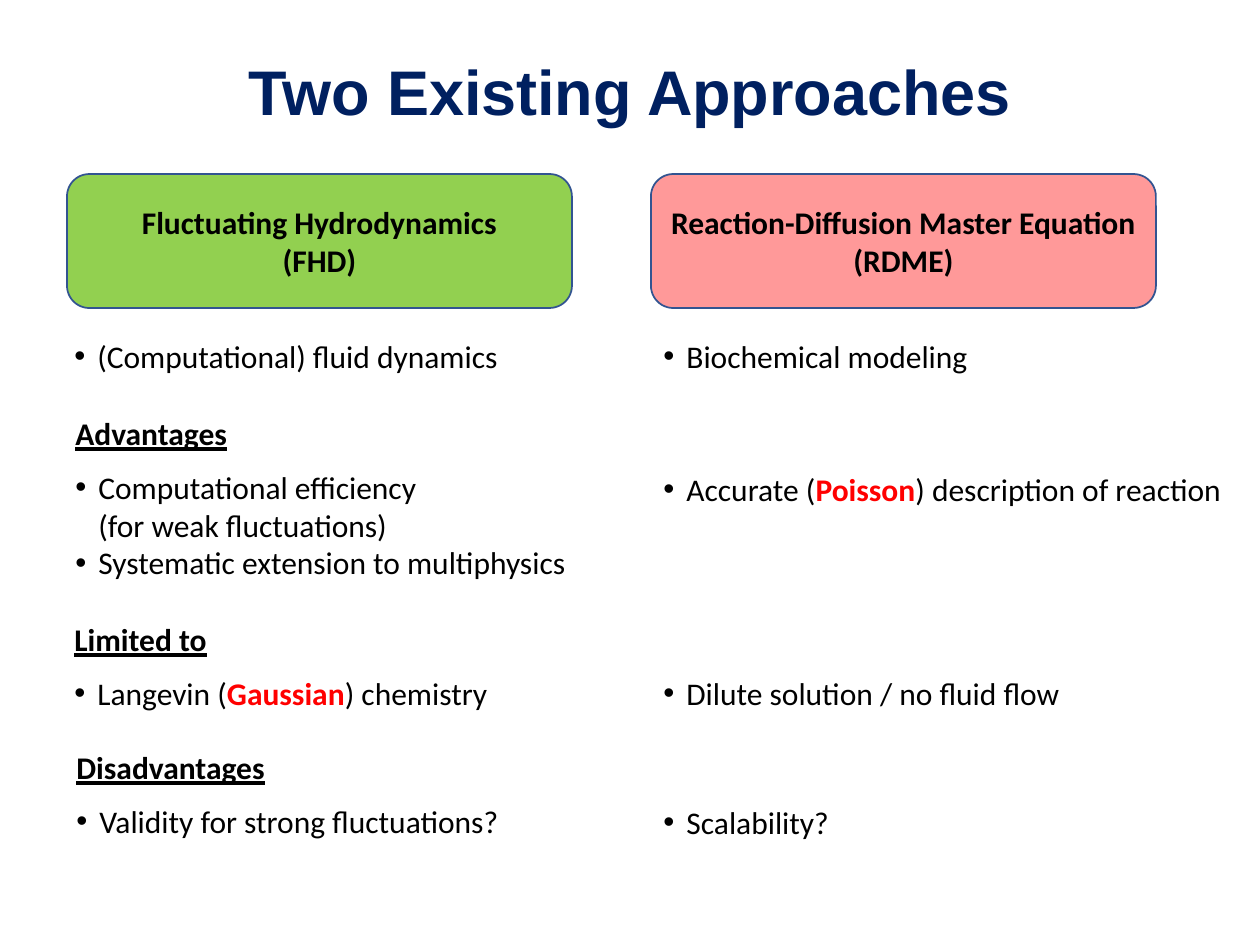
from lxml import etree
from pptx import Presentation
from pptx.dml.color import RGBColor
from pptx.enum.shapes import MSO_SHAPE
from pptx.enum.text import MSO_ANCHOR, MSO_AUTO_SIZE, PP_ALIGN
from pptx.oxml.ns import qn
from pptx.util import Emu, Pt

ROUNDED = MSO_SHAPE.ROUNDED_RECTANGLE
MIDDLE = MSO_ANCHOR.MIDDLE
FIT_SHAPE, NO_FIT = MSO_AUTO_SIZE.SHAPE_TO_FIT_TEXT, MSO_AUTO_SIZE.NONE
CENTER = PP_ALIGN.CENTER

PX = 914400 / 126
COLORS = {"title": "002060", "text": "000000", "accent": "FF0000",
          "line": "325491", "fhd": "92D050", "rdme": "FF9999"}
INDENT = 23


def px(n):
    return Emu(round(n * PX))


class Deck:
    title_font = {"name": "Arial", "size": Pt(36), "bold": True}
    body_font = {"name": "Calibri", "size": Pt(18), "bold": False}

    def __init__(self):
        self.prs = Presentation()
        self.prs.slide_width, self.prs.slide_height = px(1260), px(945)
        self.s = self.prs.slides.add_slide(self.prs.slide_layouts[5])

    def run(self, p, text, color="text", **changes):
        r = p.add_run()
        r.text = text
        for name, value in {**self.body_font, **changes}.items():
            setattr(r.font, name, value)
        r.font.color.rgb = RGBColor.from_string(COLORS[color])

    def title(self, text, *box):
        sp = self.s.shapes.title
        sp.left, sp.top, sp.width, sp.height = map(px, box)
        tf = sp.text_frame
        tf.auto_size, tf.vertical_anchor = NO_FIT, MIDDLE
        p = tf.paragraphs[0]
        p.alignment, p.line_spacing = CENTER, 0.9
        self.run(p, text, "title", **self.title_font)

    def header(self, lines, fill, *box):
        sp = self.s.shapes.add_shape(ROUNDED, *map(px, box))
        sp.shadow.inherit = False
        sp.fill.solid()
        sp.fill.fore_color.rgb = RGBColor.from_string(COLORS[fill])
        sp.line.color.rgb = RGBColor.from_string(COLORS["line"])
        sp.line.width = Pt(1)
        tf = sp.text_frame
        tf.vertical_anchor = MIDDLE
        for i, line in enumerate(lines):
            p = tf.add_paragraph() if i else tf.paragraphs[0]
            p.alignment = CENTER
            self.run(p, line, bold=True)

    def notes(self, lines, *box):
        """Lines start with '# ' (heading), '- ' (bullet) or '  ' (continued)."""
        tf = self.s.shapes.add_textbox(*map(px, box)).text_frame
        tf.word_wrap, tf.auto_size = True, FIT_SHAPE
        for i, line in enumerate(lines):
            p = tf.add_paragraph() if i else tf.paragraphs[0]
            kind, text = line[0], line[2:]
            if kind == "#":
                p.space_after = Pt(9)
                self.run(p, text, bold=True, underline=True)
                continue
            self.indent(p, bullet=kind == "-")
            # Text between asterisks is emphasised
            for j, part in enumerate(text.split("*")):
                if j % 2:
                    self.run(p, part, "accent", bold=True)
                else:
                    self.run(p, part)

    def indent(self, p, bullet):
        pPr = p._p.get_or_add_pPr()
        pPr.set("marL", str(px(INDENT)))
        pPr.set("indent", str(-px(INDENT) if bullet else 0))
        if bullet:
            etree.SubElement(pPr, qn("a:buFont")).set("typeface", "Arial")
            etree.SubElement(pPr, qn("a:buChar")).set("char", "•")


def main():
    deck = Deck()
    deck.title("Two Existing Approaches", 87, 50, 1086, 91)

    # Column headers
    left, right = 67, 651
    deck.header(["Fluctuating Hydrodynamics", "(FHD)"], "fhd",
                left, 174, 505, 134)
    deck.header(["Reaction-Diffusion Master Equation", "(RDME)"], "rdme",
                right, 174, 505, 134)

    # Left column: field, then headed sections
    deck.notes(["- (Computational) fluid dynamics"], 62, 331, 543, 53)
    deck.notes(["# Advantages", "- Computational efficiency",
                "  (for weak fluctuations)",
                "- Systematic extension to multiphysics"], 63, 408, 544, 181)
    deck.notes(["# Limited to", "- Langevin (*Gaussian*) chemistry"],
               62, 614, 515, 105)
    deck.notes(["# Disadvantages", "- Validity for strong fluctuations?"],
               64, 742, 483, 105)

    # Right column: one bullet beside each section
    for text, top, width in [
            ("Biochemical modeling", 331, 449),
            ("Accurate (*Poisson*) description of reaction", 464, 586),
            ("Dilute solution / no fluid flow", 668, 515),
            ("Scalability?", 797, 433)]:
        deck.notes(["- " + text], right, top, width, 50)

    deck.prs.save("out.pptx")


if __name__ == "__main__":
    main()
